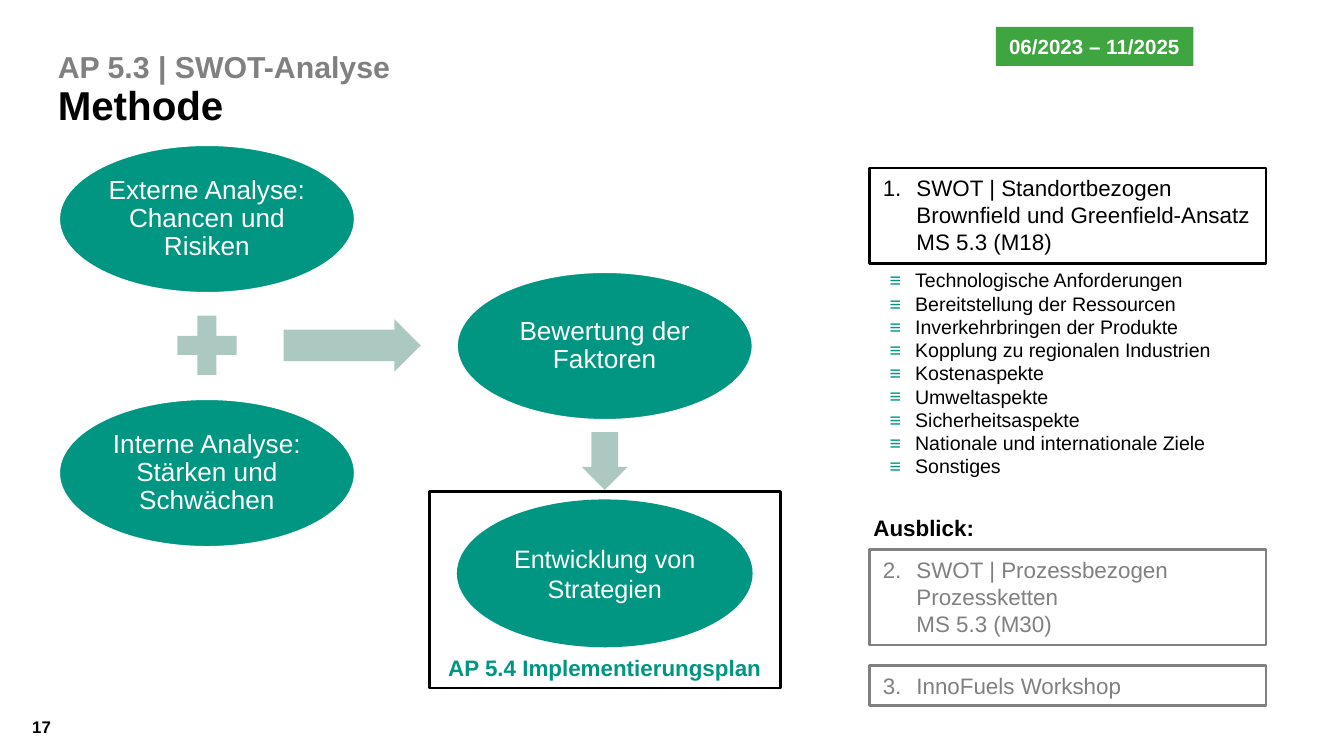
"""Build the SWOT method slide with its analysis flow and topic list."""
from lxml import etree
from pptx import Presentation
from pptx import util as u
from pptx.dml.color import RGBColor
from pptx.enum import shapes, text
from pptx.oxml.ns import qn

W = 10
H = W * 9 / 16
FONT = "Arial"
BLACK, GREY, WHITE = "000000", "808080", "FFFFFF"
TEAL, SAGE, GREEN = "009682", "ABC9C1", "3EA540"
G = shapes.MSO_SHAPE
TOP, MIDDLE, BOTTOM = text.MSO_ANCHOR.TOP, text.MSO_ANCHOR.MIDDLE, text.MSO_ANCHOR.BOTTOM
LEFT, CENTER = text.PP_ALIGN.LEFT, text.PP_ALIGN.CENTER

MARGIN = 0.43
FLOW_X = (1.54, 4.5)
FLOW_Y = 1.63
FLOW_STEP = 0.945
OVAL = (2.2, 1.1)
PANEL_X, PANEL_W = 6.47, 2.95

TITLE = [("AP 5.3 | SWOT-Analyse", 16.2, GREY), ("Methode", 21.6, BLACK)]
OVALS = [
    ("Externe Analyse: Chancen und Risiken", 0, 0, 14, 0.9, WHITE),
    ("Interne Analyse: Stärken und Schwächen", 0, 2, 14, 0.9, WHITE),
    ("Bewertung der Faktoren", 1, 1, 14, 0.9, WHITE),
    ("Entwicklung von Strategien", 1, 2.79, 13.5, 1, None),
]
SYMBOLS = [
    (G.MATH_PLUS, FLOW_X[0], 2.57, 0.6, 0.6, ()),
    (G.RIGHT_ARROW, 2.62, 2.57, 1.02, 0.39, (0.6, 0.5)),
    (G.DOWN_ARROW, FLOW_X[1], 3.43, 0.34, 0.43, (0.587, 0.5)),
]
STEPS = [
    (["SWOT | Standortbezogen", "Brownfield und Greenfield-Ansatz", "MS 5.3 (M18)"], 1.25, 0.71, BLACK),
    (["SWOT | Prozessbezogen", "Prozessketten", "MS 5.3 (M30)"], 4.09, 0.71, GREY),
    (["InnoFuels Workshop"], 4.95, 0.3, GREY),
]
TOPICS = [
    "Technologische Anforderungen", "Bereitstellung der Ressourcen",
    "Inverkehrbringen der Produkte", "Kopplung zu regionalen Industrien",
    "Kostenaspekte", "Umweltaspekte", "Sicherheitsaspekte",
    "Nationale und internationale Ziele", "Sonstiges",
]


def rgb(value):
    """Turn a hex string into a colour."""
    return RGBColor.from_string(value)


def box(x, y, w, h):
    """Convert a box in inches to slide units."""
    return [u.Inches(v) for v in (x, y, w, h)]


def centred(x, y, w, h):
    """Return the box of the given size around a centre."""
    return x - w / 2, y - h / 2, w, h


def add_run(p, words, size, color, bold=False):
    """Append one formatted run."""
    r = p.add_run()
    r.text = words
    r.font.name, r.font.size, r.font.bold = FONT, u.Pt(size), bold
    r.font.color.rgb = rgb(color)


def write(sp, lines, anchor=TOP, align=LEFT, spacing=None, inset=None, wrap=True):
    """Fill a shape with one paragraph of (words, size, color, bold) lines."""
    tf = sp.text_frame
    tf.word_wrap, tf.vertical_anchor = wrap, anchor
    if inset is not None:
        tf.margin_left = tf.margin_right = tf.margin_top = tf.margin_bottom = u.Inches(inset)
    p = tf.paragraphs[0]
    p.alignment = align
    if spacing:
        p.line_spacing = spacing
    for i, line in enumerate(lines):
        if i:
            p.add_line_break()
        add_run(p, *line)
    return p


def add_shape(s, kind, area, fill=None, line=None, width=1.5):
    """Add a flat preset shape with optional fill and outline."""
    sp = s.shapes.add_shape(kind, *box(*area))
    sp.shadow.inherit = False
    if fill:
        sp.fill.solid()
        sp.fill.fore_color.rgb = rgb(fill)
    else:
        sp.fill.background()
    if line:
        sp.line.color.rgb, sp.line.width = rgb(line), u.Pt(width)
    else:
        sp.line.fill.background()
    return sp


def add_label(s, area, lines, **layout):
    """Add a text box."""
    write(s.shapes.add_textbox(*box(*area)), lines, **layout)


def set_bullet(p, indent, tag, color=None, **attrs):
    """Give a paragraph a hanging bullet or number."""
    ppr = p._p.get_or_add_pPr()
    ppr.set("marL", str(u.Inches(indent)))
    ppr.set("indent", str(-u.Inches(indent)))
    if color:
        clr = etree.SubElement(ppr, qn("a:buClr"))
        etree.SubElement(clr, qn("a:srgbClr"), val=color)
    etree.SubElement(ppr, qn("a:buFont"), typeface=FONT)
    etree.SubElement(ppr, qn("a:" + tag), **attrs)


def add_flow(s):
    """Draw the ovals, the symbols between them and the plan frame."""
    for kind, x, y, w, h, adjust in SYMBOLS:
        sp = add_shape(s, kind, centred(x, y, w, h), SAGE)
        for i, value in enumerate(adjust):
            sp.adjustments[i] = value
    for words, col, row, size, spacing, line in OVALS:
        area = centred(FLOW_X[col], FLOW_Y + row * FLOW_STEP, *OVAL)
        sp = add_shape(s, G.OVAL, area, TEAL, line, 1)
        write(sp, [(words, size, WHITE)], MIDDLE, CENTER, spacing, 0.02)
    frame = add_shape(s, G.RECTANGLE, centred(FLOW_X[1], 4.39, 2.61, 1.46), line=BLACK)
    write(frame, [("AP 5.4 Implementierungsplan", 12, TEAL, True)], BOTTOM, CENTER)


def add_steps(s):
    """Draw the numbered boxes of the right panel."""
    for number, (lines, y, h, color) in enumerate(STEPS, 1):
        sp = add_shape(s, G.RECTANGLE, (PANEL_X, y, PANEL_W, h), line=color)
        p = write(sp, [(words, 12, color) for words in lines])
        set_bullet(p, 0.25, "buAutoNum", type="arabicPeriod", startAt=str(number))


def add_topics(s):
    """Add the one-cell table of topics."""
    tbl = s.shapes.add_table(1, 1, *box(6.56, 2, 2.86, 1.74)).table
    tbl.first_row = tbl.horz_banding = False
    cell = tbl.cell(0, 0)
    cell.fill.background()
    cell.margin_left = cell.margin_right = u.Inches(0.06)
    cell.margin_top = cell.margin_bottom = 0
    tf = cell.text_frame
    for i, topic in enumerate(TOPICS):
        p = tf.add_paragraph() if i else tf.paragraphs[0]
        p.line_spacing = 1.07
        set_bullet(p, 0.19, "buChar", TEAL, char="≡")
        add_run(p, topic, 10.5, BLACK)


def main():
    """Assemble and save the slide."""
    prs = Presentation()
    prs.slide_width, prs.slide_height = u.Inches(W), u.Inches(H)
    s = prs.slides.add_slide(prs.slide_layouts[6])
    add_label(s, (0.24, 5.19, 0.36, 0.43), [("17", 9, BLACK, True)], anchor=MIDDLE, inset=0)
    add_label(s, (MARGIN, 0.33, 7.51, 0.63), [(*line, True) for line in TITLE],
              anchor=BOTTOM, spacing=0.9, inset=0)
    date = add_shape(s, G.RECTANGLE, (7.41, 0.2, 1.47, 0.29), GREEN)
    write(date, [("06/2023 – 11/2025", 11, WHITE, True)], wrap=False)
    add_flow(s)
    add_steps(s)
    add_topics(s)
    add_label(s, (6.4, 3.78, 3.08, 0.3), [("Ausblick:", 12, BLACK, True)])
    prs.save("out.pptx")


if __name__ == "__main__":
    main()
